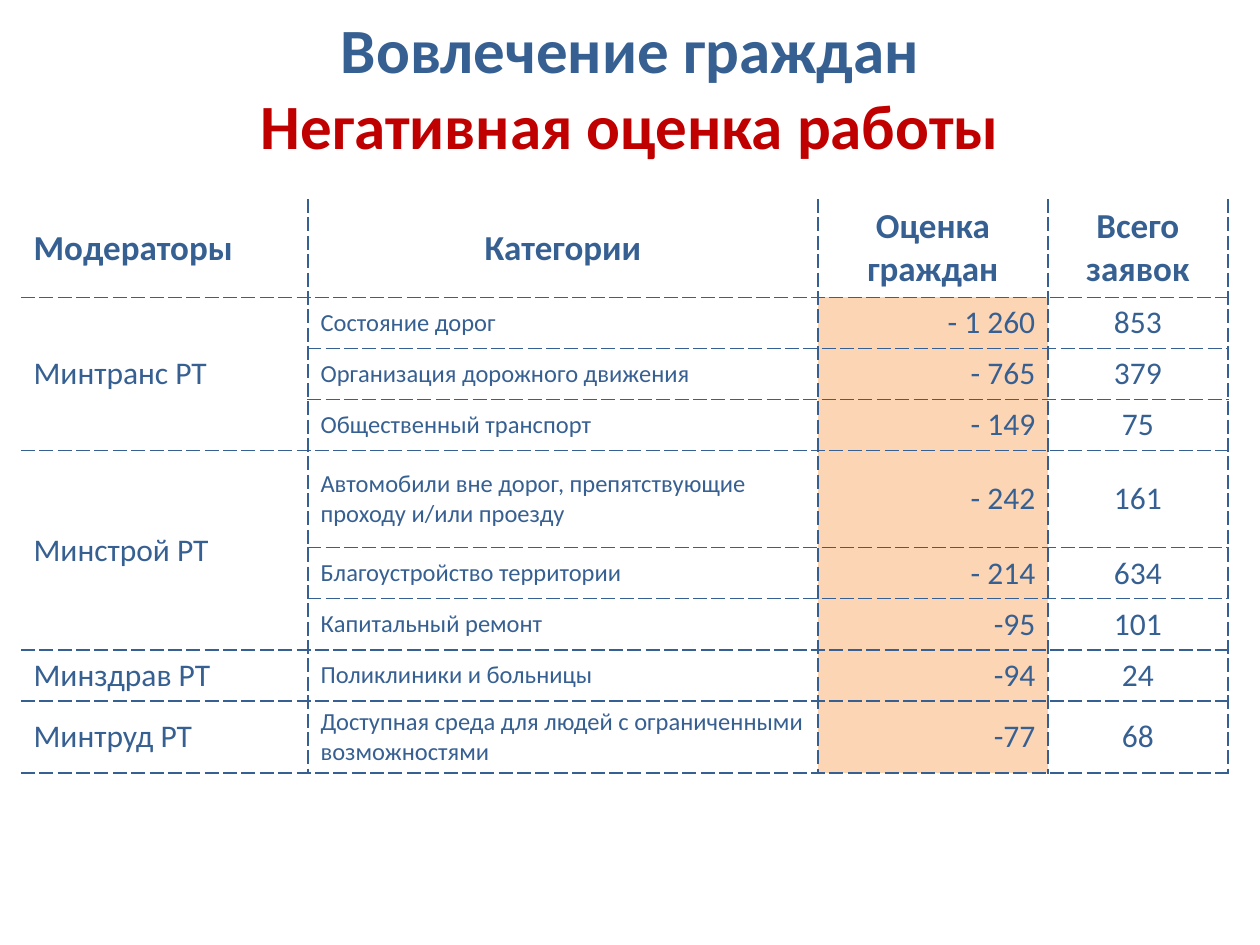
from lxml.etree import SubElement
from pptx import Presentation
from pptx.dml.color import RGBColor
from pptx.enum.text import MSO_ANCHOR as Anchor, PP_ALIGN as Align
from pptx.oxml.ns import qn
from pptx.util import Pt

PX = 914400 // 126
BLUE, RED, PEACH = "376092", "C00000", "FCD5B5"
FONT = "Calibri"

TITLE = [("Вовлечение граждан", BLUE), ("Негативная оценка работы", RED)]
HEADER = ["Модераторы", "Категории", "Оценка граждан", "Всего заявок"]
MODERATORS = [
    ("Минтранс РТ", [
        ("Состояние дорог", "- 1 260", "853"),
        ("Организация дорожного движения", "- 765", "379"),
        ("Общественный транспорт", "- 149", "75"),
    ]),
    ("Минстрой РТ", [
        ("Автомобили вне дорог, препятствующие проходу и/или проезду", "- 242", "161"),
        ("Благоустройство территории", "- 214", "634"),
        ("Капитальный ремонт", "-95", "101"),
    ]),
    ("Минздрав РТ", [("Поликлиники и больницы", "-94", "24")]),
    ("Минтруд РТ", [("Доступная среда для людей с ограниченными возможностями", "-77", "68")]),
]
COLUMN_WIDTHS = [287, 510, 230, 180]
ROW_HEIGHTS = [98, 51, 51, 51, 97, 51, 51, 51, 72]
HEADER_ALIGNS = [Align.LEFT, Align.CENTER, Align.CENTER, Align.CENTER]
BODY_ALIGNS = [Align.LEFT, Align.LEFT, Align.RIGHT, Align.CENTER]
BODY_SIZES = [18, 14, 18, 18]
SCORE_COLUMN = 2


def px(length):
    return length * PX


def rgb(color):
    return RGBColor.from_string(color)


def set_borders(cell, hidden):
    """Dash every side of the cell except the hidden ones."""
    properties = cell._tc.get_or_add_tcPr()
    for index, side in enumerate("LRTB"):
        line = SubElement(properties, qn(f"a:ln{side}"), w=str(Pt(1)))
        if side in hidden:
            SubElement(line, qn("a:noFill"))
        else:
            fill = SubElement(line, qn("a:solidFill"))
            SubElement(fill, qn("a:srgbClr"), val=BLUE)
            SubElement(line, qn("a:prstDash"), val="sysDash")
        properties.insert(index, line)  # borders come before the cell fill


def write_cell(cell, text, size, align, bold=False):
    cell.text = text
    paragraph = cell.text_frame.paragraphs[0]
    paragraph.alignment = align
    font = paragraph.font
    font.name, font.size, font.bold = FONT, Pt(size), bold
    font.color.rgb = rgb(BLUE)


def add_title(slide):
    title = slide.shapes.title
    title.left, title.top, title.width, title.height = map(px, (0, 4, 1260, 165))
    title.text_frame.vertical_anchor = Anchor.MIDDLE
    paragraph = title.text_frame.paragraphs[0]
    paragraph.alignment = Align.CENTER
    font = paragraph.font
    font.name, font.size, font.bold = FONT, Pt(36), True
    for index, (text, color) in enumerate(TITLE):
        if index:
            paragraph.add_line_break()
        run = paragraph.add_run()
        run.text = text
        run.font.color.rgb = rgb(color)


def add_ratings(slide):
    frame = slide.shapes.add_table(
        len(ROW_HEIGHTS), len(COLUMN_WIDTHS), px(21), px(199),
        px(sum(COLUMN_WIDTHS)), px(sum(ROW_HEIGHTS)))
    table = frame.table
    table.first_row = table.horz_banding = False
    for column, width in zip(table.columns, COLUMN_WIDTHS):
        column.width = px(width)
    for row, height in zip(table.rows, ROW_HEIGHTS):
        row.height = px(height)

    for r in range(len(ROW_HEIGHTS)):
        for c in range(len(COLUMN_WIDTHS)):
            cell = table.cell(r, c)
            cell.vertical_anchor = Anchor.MIDDLE
            if r and c == SCORE_COLUMN:
                cell.fill.solid()
                cell.fill.fore_color.rgb = rgb(PEACH)
            else:
                cell.fill.background()
            set_borders(cell, ("T" if r == 0 else "") + ("L" if c == 0 else ""))

    for c, text in enumerate(HEADER):
        write_cell(table.cell(0, c), text, 20, HEADER_ALIGNS[c], bold=True)
    first = 1
    for moderator, categories in MODERATORS:
        last = first + len(categories) - 1
        if last > first:
            table.cell(first, 0).merge(table.cell(last, 0))
        write_cell(table.cell(first, 0), moderator, BODY_SIZES[0], BODY_ALIGNS[0])
        for r, values in enumerate(categories, first):
            for c, text in enumerate(values, 1):
                write_cell(table.cell(r, c), text, BODY_SIZES[c], BODY_ALIGNS[c])
        first = last + 1


def main():
    presentation = Presentation()
    presentation.slide_width, presentation.slide_height = px(1260), px(945)
    slide = presentation.slides.add_slide(presentation.slide_layouts[5])
    add_ratings(slide)
    add_title(slide)
    presentation.save("out.pptx")


if __name__ == "__main__":
    main()
